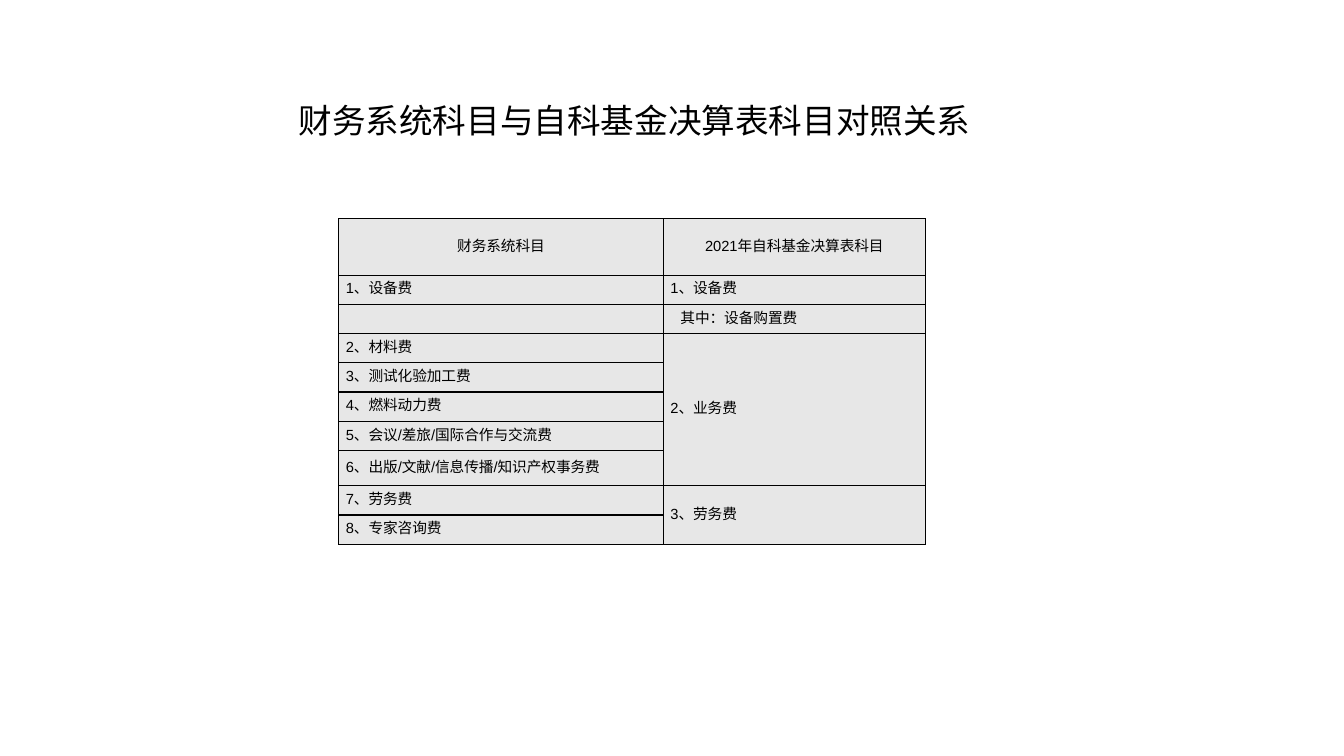
from dataclasses import dataclass

from lxml.etree import SubElement
from pptx import Presentation
from pptx.dml.color import RGBColor
from pptx.enum.text import MSO_ANCHOR as Anchor, MSO_AUTO_SIZE as AutoSize, PP_ALIGN as Align
from pptx.oxml.ns import qn
from pptx.util import Inches, Pt


@dataclass(frozen=True)
class Theme:
    """Colours, font and type sizes of the slide."""
    ink: str = "000000"
    cell: str = "E7E7E7"
    font: str = "Arial"
    title_size: float = 24
    cell_size: float = 10.5
    line_spacing: float = 12
    border: float = 1


THEME = Theme()
TITLE = "财务系统科目与自科基金决算表科目对照关系"
COLUMN_WIDTHS = (3.22, 2.6)
HEADER_HEIGHT, ROW_HEIGHT, PUBLICATION_HEIGHT = 0.56, 0.29, 0.35
PUBLICATION_ROW = 7
CELL_MARGIN, SUBITEM_MARGIN = 0.07, 0.17
SUBITEM = "其中：设备购置费"
ROWS = (
    ("财务系统科目", "2021年自科基金决算表科目"),
    ("1、设备费", "1、设备费"),
    ("", SUBITEM),
    ("2、材料费", "2、业务费"),
    ("3、测试化验加工费", ""),
    ("4、燃料动力费", ""),
    ("5、会议/差旅/国际合作与交流费", ""),
    ("6、出版/文献/信息传播/知识产权事务费", ""),
    ("7、劳务费", "3、劳务费"),
    ("8、专家咨询费", ""),
)
MERGED_ROWS = ((3, 7), (8, 9))


def format_font(font, size):
    """Apply the theme font and ink at the given size."""
    font.name = THEME.font
    font.size = Pt(size)
    font.bold = False
    font.color.rgb = RGBColor.from_string(THEME.ink)


def add_title(slide, left, top, width, height):
    """Place the slide title in the given box."""
    title = slide.shapes.title
    title.left, title.top = Inches(left), Inches(top)
    title.width, title.height = Inches(width), Inches(height)
    frame = title.text_frame
    frame.text = TITLE
    frame.word_wrap = True
    frame.auto_size = AutoSize.SHAPE_TO_FIT_TEXT
    frame.vertical_anchor = Anchor.TOP
    paragraph = frame.paragraphs[0]
    paragraph.alignment = Align.LEFT
    format_font(paragraph.runs[0].font, THEME.title_size)


def draw_borders(cell):
    """Rule all four sides of a cell."""
    properties = cell._tc.get_or_add_tcPr()
    for side in ("a:lnL", "a:lnR", "a:lnT", "a:lnB"):
        line = SubElement(properties, qn(side), w=str(Pt(THEME.border)))
        fill = SubElement(line, qn("a:solidFill"))
        SubElement(fill, qn("a:srgbClr"), val=THEME.ink)


def fill_cell(cell, text, alignment):
    """Write and format one table cell."""
    draw_borders(cell)
    cell.fill.solid()
    cell.fill.fore_color.rgb = RGBColor.from_string(THEME.cell)
    cell.vertical_anchor = Anchor.MIDDLE
    cell.margin_left = Inches(SUBITEM_MARGIN if text == SUBITEM else CELL_MARGIN)
    cell.margin_right = Inches(CELL_MARGIN)
    cell.margin_top = cell.margin_bottom = 0
    cell.text_frame.text = text
    paragraph = cell.text_frame.paragraphs[0]
    paragraph.alignment = alignment
    paragraph.line_spacing = Pt(THEME.line_spacing)
    format_font(paragraph.font, THEME.cell_size)
    for run in paragraph.runs:
        format_font(run.font, THEME.cell_size)


def add_subject_table(slide, left, top, width, height):
    """Place the table of matching account subjects in the given box."""
    table = slide.shapes.add_table(len(ROWS), len(COLUMN_WIDTHS), Inches(left), Inches(top),
                                   Inches(width), Inches(height)).table
    table.first_row = table.horz_banding = False
    for column, column_width in zip(table.columns, COLUMN_WIDTHS):
        column.width = Inches(column_width)
    special_heights = {0: HEADER_HEIGHT, PUBLICATION_ROW: PUBLICATION_HEIGHT}
    for row_index, texts in enumerate(ROWS):
        table.rows[row_index].height = Inches(special_heights.get(row_index, ROW_HEIGHT))
        alignment = Align.JUSTIFY if row_index else Align.CENTER
        for column_index, text in enumerate(texts):
            fill_cell(table.cell(row_index, column_index), text, alignment)
    for first, last in MERGED_ROWS:
        table.cell(first, 1).merge(table.cell(last, 1))


def main():
    """Build the slide and save it."""
    presentation = Presentation()
    presentation.slide_width, presentation.slide_height = Inches(13.33), Inches(7.5)
    slide = presentation.slides.add_slide(presentation.slide_layouts[5])
    add_title(slide, 2.86, 0.94, 7.19, 0.5)
    add_subject_table(slide, 3.36, 2.17, 5.82, 3.21)
    presentation.save("out.pptx")


if __name__ == "__main__":
    main()
